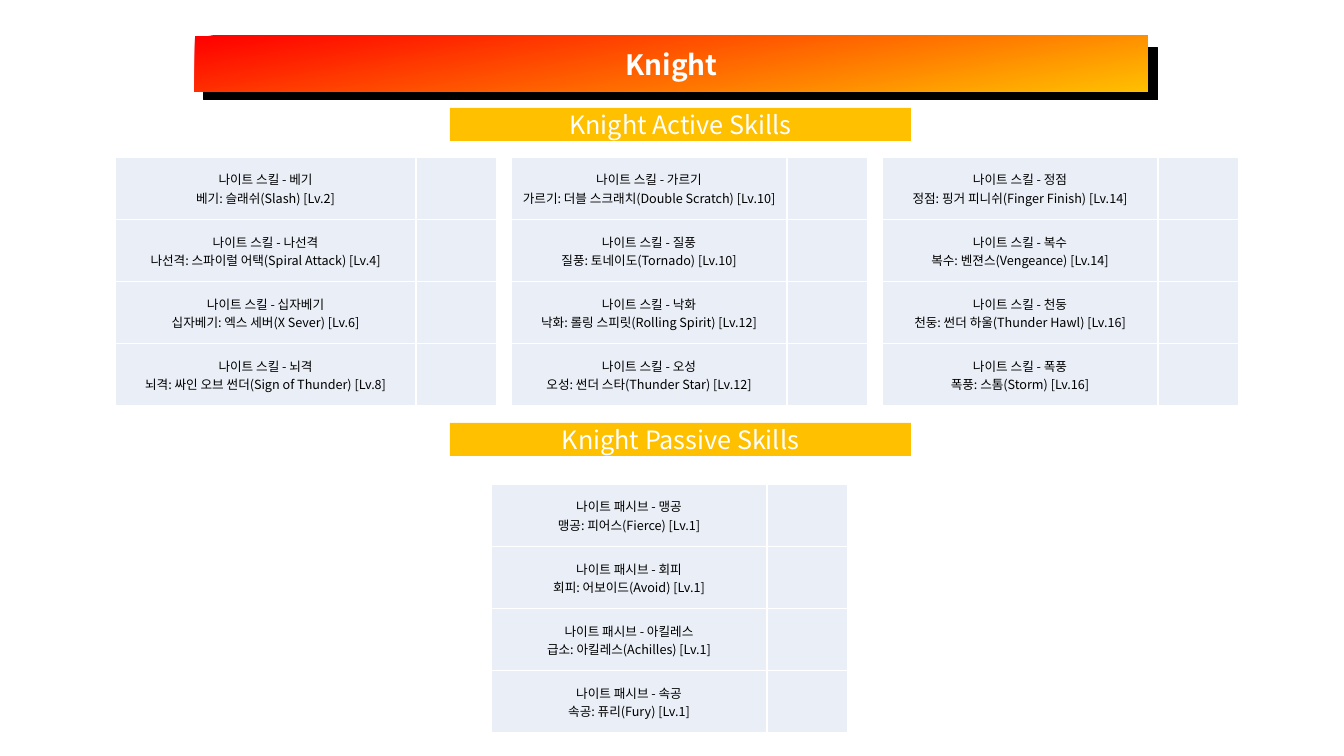
from lxml.etree import SubElement
from pptx import Presentation
from pptx.dml.color import RGBColor
from pptx.enum.shapes import MSO_SHAPE
from pptx.enum.text import MSO_ANCHOR, PP_ALIGN
from pptx.oxml import parse_xml
from pptx.oxml.ns import nsdecls, qn
from pptx.util import Pt

FONT = "Noto Sans CJK KR"
WHITE = RGBColor(0xFF, 0xFF, 0xFF)
BLACK = RGBColor(0x00, 0x00, 0x00)
RED = RGBColor(0xFF, 0x00, 0x00)
GOLD = RGBColor(0xFF, 0xC0, 0x00)
PALE_BLUE = RGBColor(0xEA, 0xEF, 0xF7)

PX = 914400 / 100.8
TABLE_HEIGHT = 249
ICON_WIDTH = 81


def add_bar(shapes, *box):
    """Add a plain rectangle, with its box given in px."""
    shape = shapes.add_shape(MSO_SHAPE.RECTANGLE, *(round(length * PX) for length in box))
    shape.shadow.inherit = False
    shape.line.fill.background()
    shape.fill.solid()
    return shape


def write_centred(frame, lines, size, color, bold=False):
    """Write lines into one centred paragraph, parted by line breaks."""
    paragraph = frame.paragraphs[0]
    paragraph.alignment = PP_ALIGN.CENTER
    for index, line in enumerate(lines):
        if index:
            paragraph.add_line_break()
            SubElement(paragraph._p[-1], qn("a:rPr"), sz=str(size * 100))
        run = paragraph.add_run()
        run.text = line
        run.font.size = Pt(size)
        run.font.bold = bold
        run.font.color.rgb = color
        run.font.name = FONT
        SubElement(run._r.rPr, qn("a:ea"), typeface=FONT)


presentation = Presentation()
presentation.slide_width = round(1344 * PX)
presentation.slide_height = round(756 * PX)
slide = presentation.slides.add_slide(presentation.slide_layouts[6])

# Title with its offset black backing
title_group = slide.shapes.add_group_shape()
backing = add_bar(title_group.shapes, 204, 48, 954, 52)
backing.fill.fore_color.rgb = BLACK
backing.line.color.rgb = BLACK
backing.line.width = Pt(0.75)

title = add_bar(title_group.shapes, 195, 36, 953, 56)
title.fill.gradient()
title.fill.gradient_angle = 280
for stop, color, position in zip(title.fill.gradient_stops, (RED, GOLD), (0, 1)):
    stop.color.rgb = color
    stop.position = position
title.text_frame.word_wrap = False
title.text_frame.vertical_anchor = MSO_ANCHOR.MIDDLE
write_centred(title.text_frame, ["Knight"], 20, WHITE, bold=True)

# Section headings
for top, heading in ((108, "Knight Active Skills"), (423, "Knight Passive Skills")):
    bar = add_bar(slide.shapes, 450, top, 461, 33)
    bar.fill.fore_color.rgb = GOLD
    bar.text_frame.vertical_anchor = MSO_ANCHOR.MIDDLE
    write_centred(bar.text_frame, [heading], 18, WHITE)

# Skill tables: left, top, width of the name column, kind, skills
skill_tables = [
    (115, 157, 301, "스킬", [
        ("베기", "베기: 슬래쉬(Slash) [Lv.2]"),
        ("나선격", "나선격: 스파이럴 어택(Spiral Attack) [Lv.4]"),
        ("십자베기", "십자베기: 엑스 세버(X Sever) [Lv.6]"),
        ("뇌격", "뇌격: 싸인 오브 썬더(Sign of Thunder) [Lv.8]"),
    ]),
    (511, 157, 276, "스킬", [
        ("가르기", "가르기: 더블 스크래치(Double Scratch) [Lv.10]"),
        ("질풍", "질풍: 토네이도(Tornado) [Lv.10]"),
        ("낙화", "낙화: 롤링 스피릿(Rolling Spirit) [Lv.12]"),
        ("오성", "오성: 썬더 스타(Thunder Star) [Lv.12]"),
    ]),
    (882, 157, 276, "스킬", [
        ("정점", "정점: 핑거 피니쉬(Finger Finish) [Lv.14]"),
        ("복수", "복수: 벤젼스(Vengeance) [Lv.14]"),
        ("천둥", "천둥: 썬더 하울(Thunder Hawl) [Lv.16]"),
        ("폭풍", "폭풍: 스톰(Storm) [Lv.16]"),
    ]),
    (491, 484, 276, "패시브", [
        ("맹공", "맹공: 피어스(Fierce) [Lv.1]"),
        ("회피", "회피: 어보이드(Avoid) [Lv.1]"),
        ("아킬레스", "급소: 아킬레스(Achilles) [Lv.1]"),
        ("속공", "속공: 퓨리(Fury) [Lv.1]"),
    ]),
]
for left, top, name_width, kind, skills in skill_tables:
    box = (left, top, name_width + ICON_WIDTH, TABLE_HEIGHT)
    table = slide.shapes.add_table(
        len(skills), 2, *(round(length * PX) for length in box)).table
    table.first_row = False
    table.horz_banding = False
    for column, width in zip(table.columns, (name_width, ICON_WIDTH)):
        column.width = round(width * PX)

    for row, (name, detail) in enumerate(skills):
        cell = table.cell(row, 0)
        cell.vertical_anchor = MSO_ANCHOR.MIDDLE
        cell.margin_left = cell.margin_right = cell.margin_top = round(PX)
        cell.margin_bottom = 0
        write_centred(cell.text_frame, [f"나이트 {kind} - {name}", detail], 9, BLACK)

    for cell in table.iter_cells():
        cell.fill.solid()
        cell.fill.fore_color.rgb = PALE_BLUE
        properties = cell._tc.get_or_add_tcPr()
        for index, side in enumerate("LRTB"):
            properties.insert(index, parse_xml(
                f'<a:ln{side} {nsdecls("a")} w="{Pt(1)}"><a:solidFill>'
                f'<a:srgbClr val="{WHITE}"/></a:solidFill></a:ln{side}>'))

presentation.save("out.pptx")
